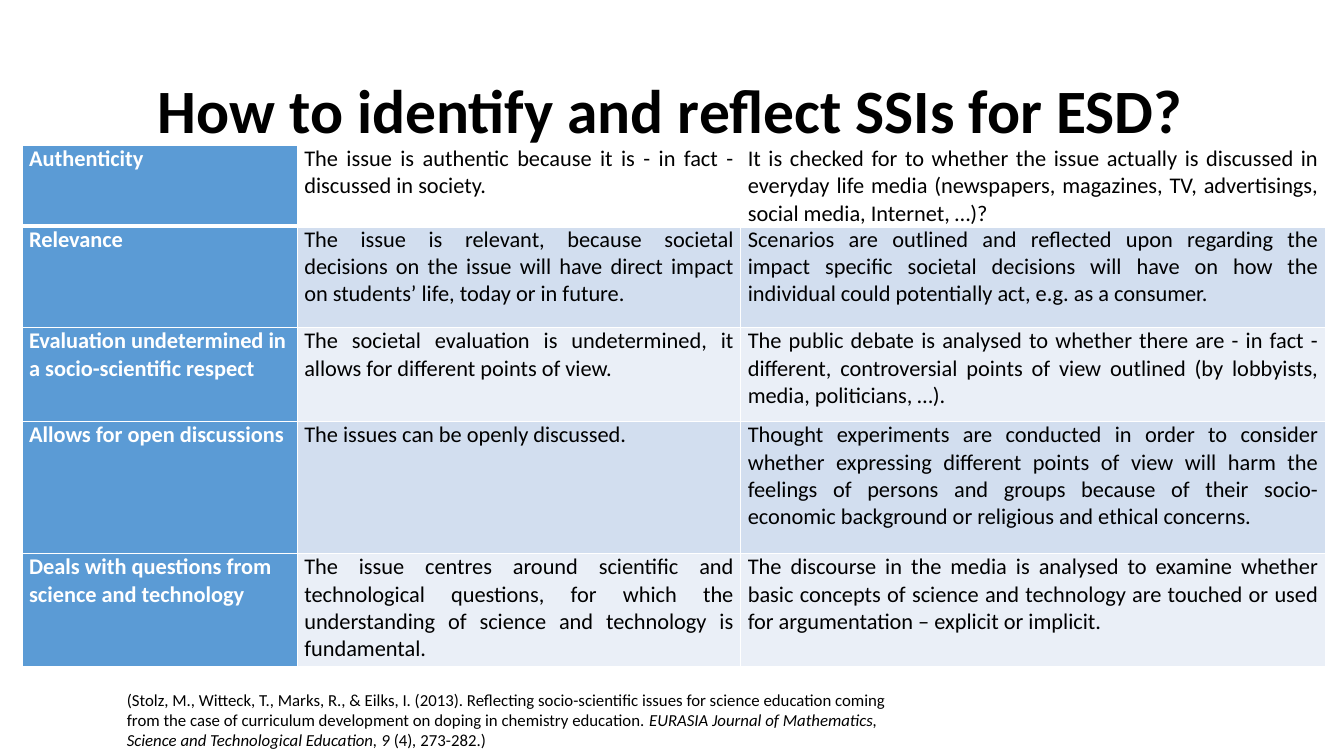
from lxml import etree
from pptx import Presentation
from pptx.dml import color
from pptx.enum import text
from pptx.oxml import ns
from pptx.util import Pt

WHITE, BLACK, BLUE = "FFFFFF", "000000", "5B9BD5"
BANDS = ["D2DEEF", "EAEFF7"]
COLUMN_WIDTHS = [196.6, 316.8, 417.6]
ROW_HEIGHTS = [54, 72.7, 67, 94.3, 80.6]
CRITERIA = [
    ("Authenticity",
     "The issue is authentic because it is - in fact - discussed in society. ",
     "It is checked for to whether the issue actually is discussed in everyday life media "
     "(newspapers, magazines, TV, advertisings, social media, Internet, …)? "),
    ("Relevance",
     "The issue is relevant, because societal decisions on the issue will have direct impact "
     "on students’ life, today or in future. ",
     "Scenarios are outlined and reflected upon regarding the impact specific societal "
     "decisions will have on how the individual could potentially act, e.g. as a consumer. "),
    ("Evaluation undetermined in a socio-scientific respect",
     "The societal evaluation is undetermined, it allows for different points of view. ",
     "The public debate is analysed to whether there are - in fact - different, controversial "
     "points of view outlined (by lobbyists, media, politicians, …). "),
    ("Allows for open discussions",
     "The issues can be openly discussed. ",
     "Thought experiments are conducted in order to consider whether expressing different "
     "points of view will harm the feelings of persons and groups because of their "
     "socio-economic background or religious and ethical concerns. "),
    ("Deals with questions from science and technology",
     "The issue centres around scientific and technological questions, for which the "
     "understanding of science and technology is fundamental. ",
     "The discourse in the media is analysed to examine whether basic concepts of science and "
     "technology are touched or used for argumentation – explicit or implicit. "),
]
CITATION = [
    ("(Stolz, M., Witteck, T., Marks, R., & Eilks, I. (2013). Reflecting socio-scientific "
     "issues for science education coming from the case of curriculum development on doping "
     "in chemistry education. ", False),
    ("EURASIA Journal of Mathematics, Science and Technological Education, 9 ", True),
    ("(4)", False),
    (", ", True),
    ("273-282.)", False),
]


def rgb(value):
    """Return the colour for a hex string."""
    return color.RGBColor.from_string(value)


def write(paragraph, words, size=16, colour=BLACK, bold=False, italic=False):
    """Add a formatted run to a paragraph."""
    run = paragraph.add_run()
    run.text = words
    font = run.font
    font.name, font.size = "Calibri", Pt(size)
    font.bold, font.italic = bold, italic
    font.color.rgb = rgb(colour)


def add_box(slide, left, top, width, height, anchor=text.MSO_ANCHOR.TOP):
    """Add a wrapping text box and return its text frame."""
    frame = slide.shapes.add_textbox(Pt(left), Pt(top), Pt(width), Pt(height)).text_frame
    frame.word_wrap = True
    frame.vertical_anchor = anchor
    return frame


def set_borders(cell, widths):
    """Draw white cell borders, with widths in points keyed by side."""
    properties = cell._tc.get_or_add_tcPr()
    for side, width in widths.items():
        line = etree.SubElement(properties, ns.qn(f"a:ln{side}"), w=str(Pt(width)))
        fill = etree.SubElement(line, ns.qn("a:solidFill"))
        etree.SubElement(fill, ns.qn("a:srgbClr"), val=WHITE)


def fill_cell(cell, words, row, column):
    """Format one cell by its place in the table."""
    cell.margin_left = cell.margin_right = Pt(5)
    cell.margin_top = cell.margin_bottom = 0
    set_borders(cell, {"L": 1, "R": 1, "T": 3 if row == 1 else 1, "B": 3 if row == 0 else 1})
    label = column == 0
    background = BLUE if label else WHITE if row == 0 else BANDS[(row - 1) % 2]
    cell.fill.solid()
    cell.fill.fore_color.rgb = rgb(background)
    paragraph = cell.text_frame.paragraphs[0]
    paragraph.alignment = text.PP_ALIGN.LEFT if label else text.PP_ALIGN.JUSTIFY
    write(paragraph, words, colour=WHITE if label else BLACK, bold=label)


def add_criteria(slide, left, top):
    """Add the table of criteria."""
    criteria = slide.shapes.add_table(
        len(ROW_HEIGHTS), len(COLUMN_WIDTHS), Pt(left), Pt(top),
        Pt(sum(COLUMN_WIDTHS)), Pt(sum(ROW_HEIGHTS))).table
    for column, width in zip(criteria.columns, COLUMN_WIDTHS):
        column.width = Pt(width)
    for row, (height, entries) in enumerate(zip(ROW_HEIGHTS, CRITERIA)):
        criteria.rows[row].height = Pt(height)
        for column, words in enumerate(entries):
            fill_cell(criteria.cell(row, column), words, row, column)


def main():
    """Build and save the slide."""
    deck = Presentation()
    deck.slide_width, deck.slide_height = Pt(960), Pt(540)
    slide = deck.slides.add_slide(deck.slide_layouts[6])

    heading = add_box(slide, 28.8, 28.8, 900.7, 104.4, text.MSO_ANCHOR.MIDDLE).paragraphs[0]
    heading.alignment = text.PP_ALIGN.CENTER
    heading.line_spacing = 0.9
    write(heading, "How to identify and reflect SSIs for ESD?", size=44, bold=True)

    citation = add_box(slide, 83.5, 488.9, 575.3, 51.1).paragraphs[0]
    for words, italic in CITATION:
        write(citation, words, size=12, italic=italic)

    add_criteria(slide, 15.8, 103.7)
    deck.save("out.pptx")


if __name__ == "__main__":
    main()
